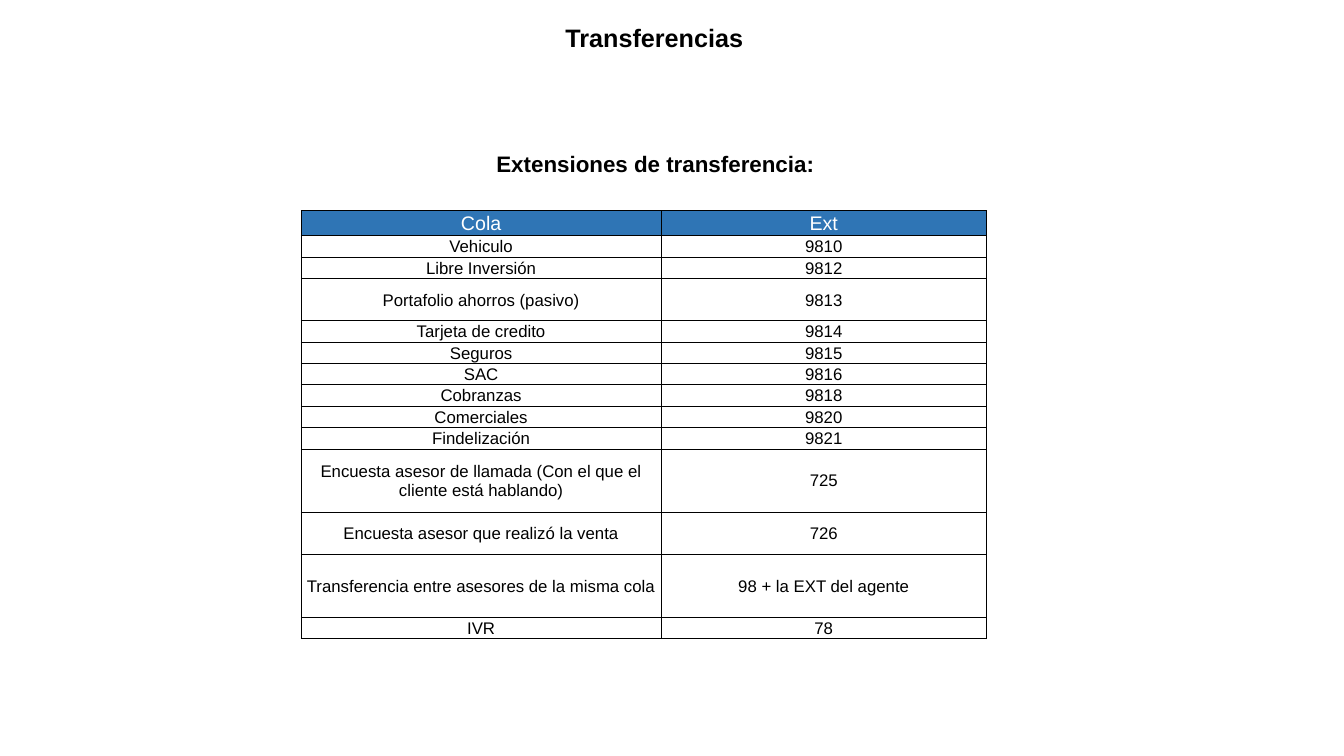
from dataclasses import dataclass

from lxml.etree import SubElement
from pptx import Presentation
from pptx.dml.color import RGBColor
from pptx.enum.text import MSO_ANCHOR, PP_ALIGN
from pptx.oxml.ns import qn
from pptx.util import Cm, Pt


@dataclass(frozen=True)
class Theme:
    """Colours and type sizes of the slide."""
    font: str = "Arial"
    ink: str = "000000"
    header_ink: str = "FFFFFF"
    header_fill: str = "2F75B5"
    title_size: float = 18
    subtitle_size: float = 16
    header_size: float = 14
    body_size: float = 12
    border_width: float = 0.5


THEME = Theme()
COLUMN_WIDTHS = (9.07, 8.2)
HEADER_HEIGHT = 0.64
LINE_HEIGHT = 0.53
HEADER = ("Cola", "Ext")
EXTENSIONS = (
    ("Vehiculo", "9810", 1),
    ("Libre Inversión", "9812", 1),
    ("Portafolio ahorros (pasivo)", "9813", 2),
    ("Tarjeta de credito", "9814", 1),
    ("Seguros", "9815", 1),
    ("SAC", "9816", 1),
    ("Cobranzas", "9818", 1),
    ("Comerciales", "9820", 1),
    ("Findelización", "9821", 1),
    ("Encuesta asesor de llamada (Con el que el cliente está hablando)", "725", 3),
    ("Encuesta asesor que realizó la venta", "726", 2),
    ("Transferencia entre asesores de la misma cola", "98 + la EXT del agente", 3),
    ("IVR", "78", 1),
)


def apply_format(target, values):
    """Set each attribute named in values on the target."""
    for name, value in values.items():
        setattr(target, name, value)


def write_text(frame, text, size, color=THEME.ink, bold=False):
    """Write one centred, formatted paragraph into a text frame."""
    para = frame.paragraphs[0]
    para.alignment = PP_ALIGN.CENTER
    span = para.add_run()
    span.text = text
    apply_format(span.font, {"name": THEME.font, "size": Pt(size), "bold": bold})
    span.font.color.rgb = RGBColor.from_string(color)


def place_heading(box, bounds, text, size, anchor):
    """Position a box and fill it with a bold heading."""
    sides = ("left", "top", "width", "height")
    apply_format(box, {side: Cm(length) for side, length in zip(sides, bounds)})
    apply_format(box.text_frame, {
        "word_wrap": True, "vertical_anchor": anchor,
        "margin_left": Cm(0.25), "margin_right": Cm(0.25),
        "margin_top": Cm(0.13), "margin_bottom": Cm(0.13),
    })
    write_text(box.text_frame, text, size, bold=True)


def add_borders(cell):
    """Draw a thin line on all four sides of a cell."""
    properties = cell._tc.get_or_add_tcPr()
    for side in ("a:lnL", "a:lnR", "a:lnT", "a:lnB"):
        line = SubElement(properties, qn(side), w=str(Pt(THEME.border_width)))
        fill = SubElement(line, qn("a:solidFill"))
        SubElement(fill, qn("a:srgbClr"), val=THEME.ink)


def fill_cell(cell, text, is_header):
    """Format one table cell and write its text."""
    apply_format(cell, {
        "vertical_anchor": MSO_ANCHOR.MIDDLE,
        "margin_left": Cm(0.03), "margin_right": Cm(0.03),
        "margin_top": Cm(0.03), "margin_bottom": Cm(0),
    })
    add_borders(cell)
    if is_header:
        cell.fill.solid()
        cell.fill.fore_color.rgb = RGBColor.from_string(THEME.header_fill)
        write_text(cell.text_frame, text, THEME.header_size, THEME.header_ink)
    else:
        cell.fill.background()
        write_text(cell.text_frame, text, THEME.body_size)


def add_extension_table(page):
    """Add the table of queues and their extensions."""
    heights = [HEADER_HEIGHT] + [LINE_HEIGHT * lines for *_, lines in EXTENSIONS]
    texts = [HEADER] + [(queue, extension) for queue, extension, _ in EXTENSIONS]
    table = page.shapes.add_table(
        len(texts), len(HEADER), Cm(7.59), Cm(5.3),
        Cm(sum(COLUMN_WIDTHS)), Cm(sum(heights))).table
    apply_format(table, {"first_row": True, "horz_banding": False})
    for column, width in zip(table.columns, COLUMN_WIDTHS):
        column.width = Cm(width)
    for index, (row, height, values) in enumerate(zip(table.rows, heights, texts)):
        row.height = Cm(height)
        for cell, text in zip(row.cells, values):
            fill_cell(cell, text, is_header=index == 0)


def main():
    """Build the transfers slide and save it."""
    deck = Presentation()
    apply_format(deck, {"slide_width": Cm(33.87), "slide_height": Cm(19.05)})
    page = deck.slides.add_slide(deck.slide_layouts.get_by_name("Title Only"))
    place_heading(page.shapes.title, (9.63, 0.43, 13.72, 1.37),
                  "Transferencias", THEME.title_size, MSO_ANCHOR.TOP)
    subtitle = page.shapes.add_textbox(0, 0, 0, 0)
    place_heading(subtitle, (1.4, 3.63, 30.23, 1),
                  "Extensiones de transferencia:", THEME.subtitle_size, MSO_ANCHOR.MIDDLE)
    add_extension_table(page)
    deck.save("out.pptx")


if __name__ == "__main__":
    main()
